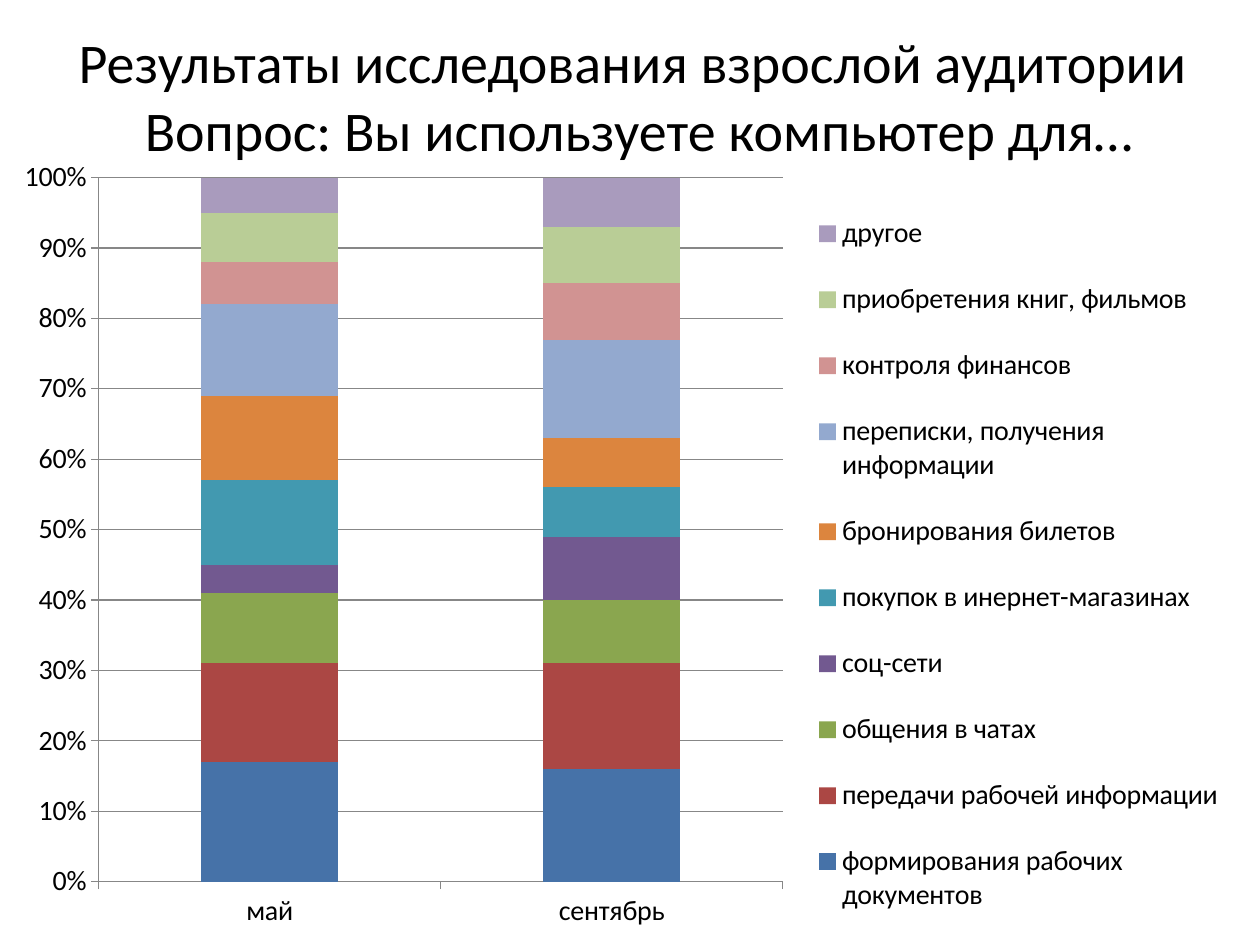
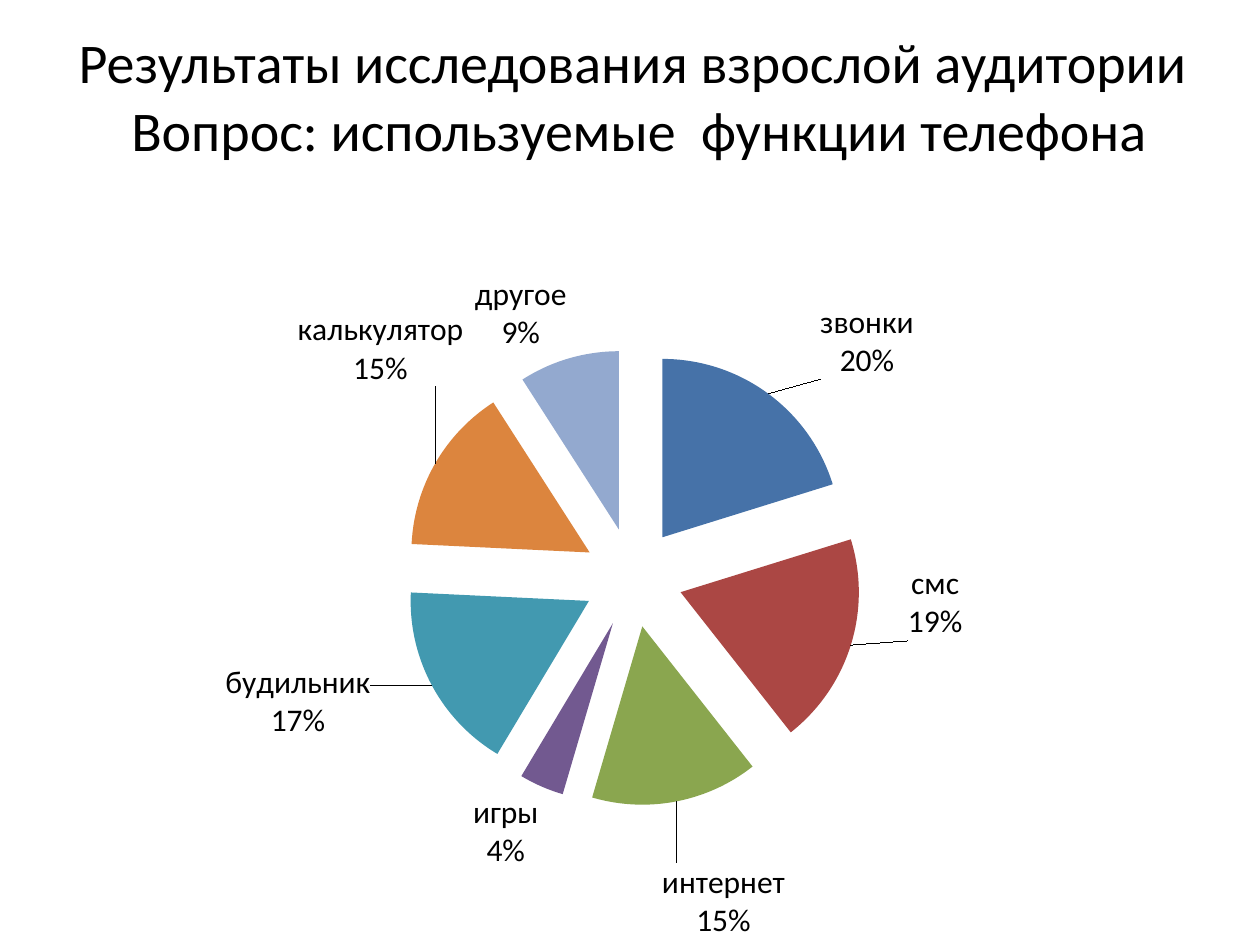
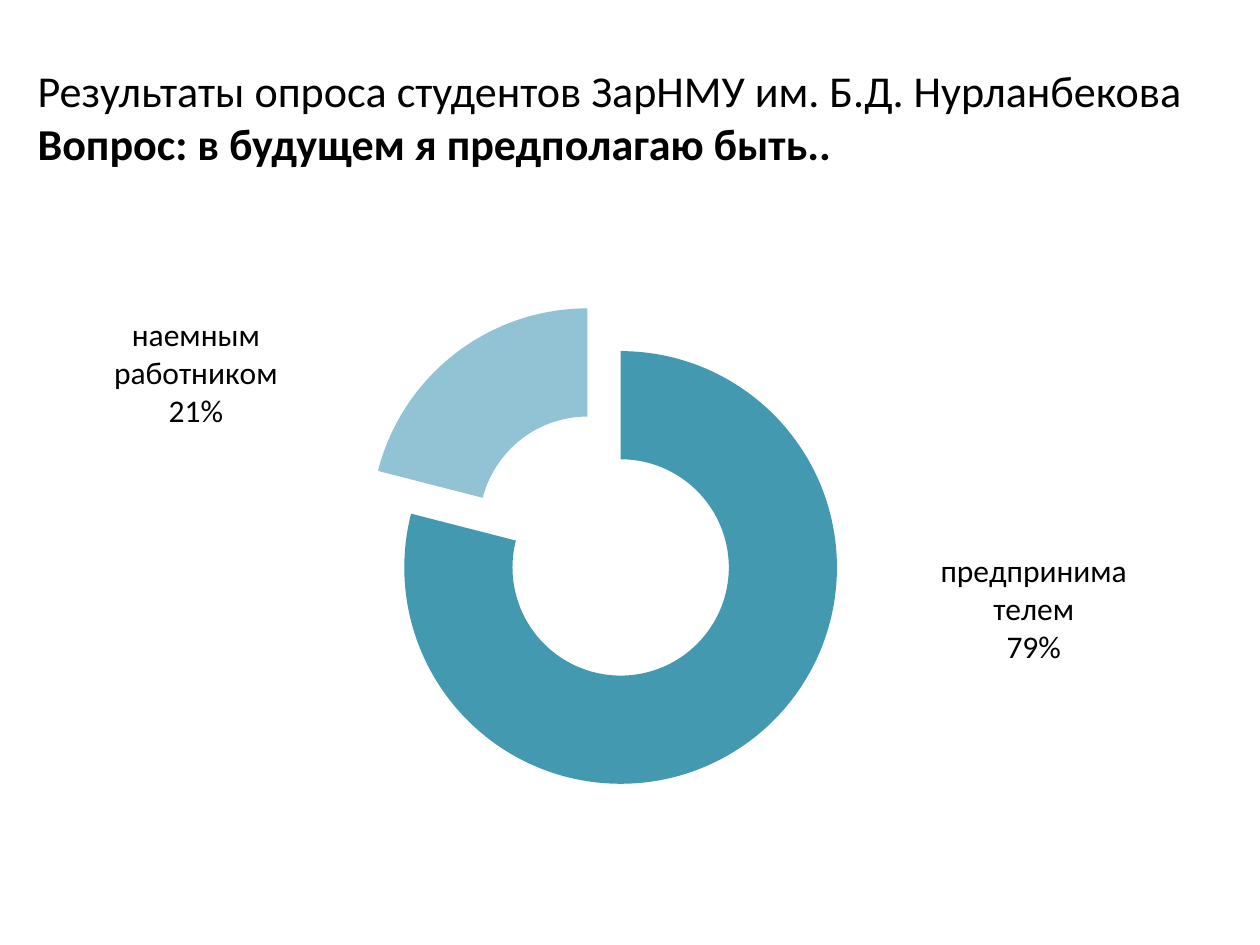
from dataclasses import dataclass

from pptx import Presentation
from pptx.chart.data import CategoryChartData
from pptx.dml.color import RGBColor
from pptx.enum.chart import XL_CHART_TYPE, XL_LABEL_POSITION, XL_LEGEND_POSITION, XL_TICK_MARK
from pptx.enum.text import MSO_ANCHOR, PP_ALIGN
from pptx.oxml import parse_xml
from pptx.oxml.ns import nsdecls, qn
from pptx.util import Inches, Pt

WIDTH, HEIGHT = Inches(10), Inches(7.5)
COLUMN, ROW = WIDTH / 10, HEIGHT / 7.5
C15 = "http://schemas.microsoft.com/office/drawing/2012/chart"


@dataclass(frozen=True)
class Theme:
    font: str = "Calibri"
    text: str = "000000"
    grid: str = "878787"
    title_size: float = 32
    survey_title_size: float = 25.2
    axis_size: float = 16
    label_size: float = 18
    palette: tuple = ("4672A8", "AB4744", "8AA64F", "725990", "4299B0",
                      "DC853E", "93A9CF", "D19392", "B9CD96", "A99BBD")
    ring: tuple = ("4299B0", "91C3D5")


THEME = Theme()
TITLE_AREA = (0.35, 0.13, 9.45, 1.25)
SURVEY_TITLE_AREA = (0.2, 0.3, 9.45, 1.25)

COMPUTER_USES = {
    "формирования рабочих документов": (17, 16),
    "передачи рабочей информации": (14, 15),
    "общения в чатах": (10, 9),
    "соц-сети": (4, 9),
    "покупок в инернет-магазинах": (12, 7),
    "бронирования билетов": (12, 7),
    "переписки, получения информации": (13, 14),
    "контроля финансов": (6, 8),
    "приобретения книг, фильмов": (7, 8),
    "другое": (5, 7),
}
PHONE_FUNCTIONS = {"звонки": 20, "смс": 19, "интернет": 15, "игры": 4,
                   "будильник": 17, "калькулятор": 15, "другое": 9}
PHONE_LABEL_SHIFTS = {0: (4, -1.1), 1: (4.2, -10.7), 2: (-1.3, 7),
                      4: (-4.6, -3.3), 5: (2.9, -9.4)}
CAREER_PLANS = {"быть предпринимателем": 79, "быть наемным работником": 21}
CAREER_LABELS = (("предпринимателем", "79%", (21.8, -12.3)),
                 ("наемным работником", "21%", (-20.3, -3.3)))
CAREER_LABEL_SIZE = (13.5, 18)


def place(area):
    left, top, width, height = area
    return (round(left * COLUMN), round(top * ROW),
            round(width * COLUMN), round(height * ROW))


def style_font(font, size, bold=False):
    font.name = THEME.font
    font.size = Pt(size)
    font.bold = bold
    font.color.rgb = RGBColor.from_string(THEME.text)


def paint(fill, color):
    fill.solid()
    fill.fore_color.rgb = RGBColor.from_string(color)


def add_title(slide, area, lines, size, align=PP_ALIGN.CENTER, bold_question=False):
    frame = slide.shapes.add_textbox(*place(area)).text_frame
    frame.word_wrap = True
    frame.vertical_anchor = MSO_ANCHOR.MIDDLE
    paragraph = frame.paragraphs[0]
    paragraph.alignment = align
    for number, line in enumerate(lines):
        if number:
            paragraph.add_line_break()
        run = paragraph.add_run()
        run.text = line
        style_font(run.font, size, bold_question and number > 0)


def layout_xml(values, tags=("x", "y", "w", "h"), modes=()):
    settings = "".join(f'<c:{tag} val="{mode}"/>' for tag, mode in modes)
    shares = "".join(f'<c:{tag} val="{value / 100:.3f}"/>' for tag, value in zip(tags, values))
    return (f'<c:layout {nsdecls("c")}><c:manualLayout>{settings}{shares}'
            '</c:manualLayout></c:layout>')


def clear_layout(element):
    for layout in element.findall(qn("c:layout")):
        element.remove(layout)


def set_inner_plot(chart, percents):
    plot_area = chart.plots[0]._element.getparent()
    clear_layout(plot_area)
    modes = (("layoutTarget", "inner"), ("xMode", "edge"), ("yMode", "edge"))
    plot_area.insert(0, parse_xml(layout_xml(percents, modes=modes)))


def add_legend(chart, percents):
    chart.has_legend = True
    legend = chart.legend
    legend.position = XL_LEGEND_POSITION.RIGHT
    legend.include_in_layout = False
    style_font(legend.font, THEME.axis_size)
    clear_layout(legend._element)
    modes = (("xMode", "edge"), ("yMode", "edge"))
    legend._element.find(qn("c:legendPos")).addnext(
        parse_xml(layout_xml(percents, modes=modes)))


def add_chart(slide, kind, area, categories, series, size, inner_plot):
    data = CategoryChartData()
    data.categories = categories
    for name, values in series.items():
        data.add_series(name, values)
    chart = slide.shapes.add_chart(kind, *place(area), data).chart
    chart.has_title = False
    chart.has_legend = False
    style_font(chart.font, size)
    set_inner_plot(chart, inner_plot)
    return chart


def style_axis(axis):
    axis.major_tick_mark = XL_TICK_MARK.OUTSIDE
    axis.minor_tick_mark = XL_TICK_MARK.NONE
    axis.format.line.color.rgb = RGBColor.from_string(THEME.grid)


def add_stacked_columns(slide, area, categories, series):
    chart = add_chart(slide, XL_CHART_TYPE.COLUMN_STACKED_100, area, categories, series,
                      THEME.axis_size, (7.95, 4.1, 55.45, 88))
    plot = chart.plots[0]
    plot.vary_by_categories = False
    plot.gap_width, plot.overlap = 150, 100
    for use, color in zip(plot.series, THEME.palette):
        paint(use.format.fill, color)
    for axis in (chart.category_axis, chart.value_axis):
        style_axis(axis)
    shares = chart.value_axis
    shares.has_major_gridlines = True
    shares.major_gridlines.format.line.color.rgb = RGBColor.from_string(THEME.grid)
    shares.tick_labels.number_format = "0%"
    shares.tick_labels.number_format_is_linked = False
    add_legend(chart, (65, 5, 35, 95))


def add_exploded_chart(slide, kind, area, shares, colors, explosion, inner_plot):
    chart = add_chart(slide, kind, area, shares.keys(), {"Series 1": shares.values()},
                      THEME.label_size, inner_plot)
    chart.plots[0].vary_by_categories = True
    series = chart.plots[0].series[0]
    series._element.find(qn("c:tx")).addnext(
        parse_xml(f'<c:explosion {nsdecls("c")} val="{explosion}"/>'))
    for index, color in enumerate(colors[:len(shares)]):
        paint(series.points[index].format.fill, color)
    labels = series.data_labels
    labels.show_value = False
    labels.show_category_name = True
    labels.show_percentage = True
    style_font(labels.font, THEME.label_size)
    return series


def separator():
    return parse_xml(f'<c:separator {nsdecls("c")}>\n</c:separator>')


def shift_label(series, index, shift):
    label = series.points[index].data_label
    style_font(label.font, THEME.label_size)
    element = series.data_labels._element.findall(qn("c:dLbl"))[-1]
    for tag, shown in (("showVal", 0), ("showCatName", 1), ("showPercent", 1)):
        element.find(qn(f"c:{tag}")).set("val", str(shown))
    clear_layout(element)
    element.find(qn("c:idx")).addnext(parse_xml(layout_xml(shift)))
    element.append(separator())
    return label, element


def add_phone_pie(slide):
    series = add_exploded_chart(slide, XL_CHART_TYPE.PIE, (0.28, 1.36, 9.45, 6.14),
                                PHONE_FUNCTIONS, THEME.palette, 28, (19.5, 23, 61.4, 59))
    labels = series.data_labels
    labels.position = XL_LABEL_POSITION.OUTSIDE_END
    labels._element.find(qn("c:showBubbleSize")).addnext(separator())
    for index, shift in PHONE_LABEL_SHIFTS.items():
        label, _ = shift_label(series, index, shift)
        label.position = XL_LABEL_POSITION.OUTSIDE_END


def add_career_ring(slide):
    series = add_exploded_chart(slide, XL_CHART_TYPE.DOUGHNUT, (-0.43, 1.78, 11.42, 5.56),
                                CAREER_PLANS, THEME.ring, 25, (28.8, 11.2, 33.9, 69.5))
    leader_lines = series.data_labels._element.find(qn("c:showLeaderLines"))
    if leader_lines is not None:
        leader_lines.set("val", "0")
    for index, (plan, share, shift) in enumerate(CAREER_LABELS):
        label, element = shift_label(series, index, shift)
        frame = label.text_frame
        for paragraph, text in zip((frame.paragraphs[0], frame.add_paragraph()), (plan, share)):
            run = paragraph.add_run()
            run.text = text
            style_font(run.font, THEME.label_size)
        size = parse_xml(layout_xml(CAREER_LABEL_SIZE, tags=("w", "h")))
        extension = parse_xml(
            f'<c:extLst {nsdecls("c")}><c:ext uri="{{CE6537A1-D6FC-4f65-9D91-7224C49458BB}}" '
            f'xmlns:c15="{C15}"><c15:layout/></c:ext></c:extLst>')
        extension[0][0].append(size[0])
        element.append(extension)


def main():
    deck = Presentation()
    deck.slide_width, deck.slide_height = WIDTH, HEIGHT
    computer, phone, career = (deck.slides.add_slide(deck.slide_layouts[6]) for _ in range(3))

    audience = "Результаты исследования взрослой аудитории "
    add_title(computer, TITLE_AREA,
              (audience, "Вопрос: Вы используете компьютер для…"), THEME.title_size)
    add_stacked_columns(computer, (0, 1.15, 9.8, 6.35), ("май", "сентябрь"), COMPUTER_USES)

    add_title(phone, TITLE_AREA,
              (audience, "Вопрос: используемые  функции телефона"), THEME.title_size)
    add_phone_pie(phone)

    add_title(career, SURVEY_TITLE_AREA,
              ("Результаты опроса студентов ЗарНМУ им. Б.Д. Нурланбекова",
               "Вопрос: в будущем я предполагаю быть.."),
              THEME.survey_title_size, PP_ALIGN.LEFT, bold_question=True)
    add_career_ring(career)
    deck.save("out.pptx")


if __name__ == "__main__":
    main()
